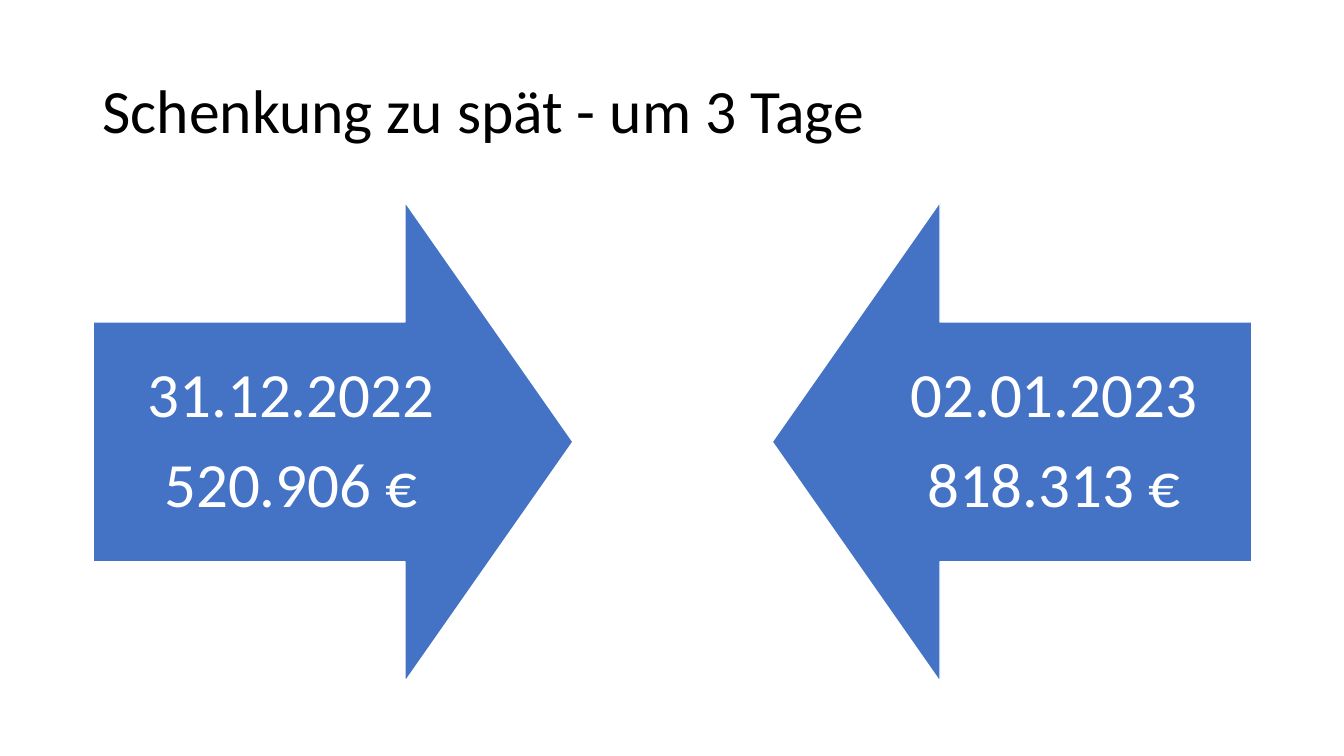
from pptx import Presentation
from pptx.dml.color import RGBColor
from pptx.enum.shapes import MSO_SHAPE
from pptx.enum.text import MSO_ANCHOR, PP_ALIGN
from pptx.util import Cm, Pt

COLORS = {"arrow": "4472C4", "light": "FFFFFF", "title": "000000"}
FONT = "Calibri"


def format_paragraph(paragraph, size, color, alignment):
    paragraph.alignment = alignment
    paragraph.line_spacing = 0.9
    for run in paragraph.runs:
        run.font.name = FONT
        run.font.size = Pt(size)
        run.font.color.rgb = RGBColor.from_string(COLORS[color])


presentation = Presentation()
presentation.slide_width = Cm(33.87)
presentation.slide_height = Cm(19.05)
slide = presentation.slides.add_slide(presentation.slide_layouts[5])

title = slide.shapes.title
title.left, title.top, title.width, title.height = Cm(2.33), Cm(1.01), Cm(29.21), Cm(3.68)
title.text_frame.text = "Schenkung zu spät - um 3 Tage"
title.text_frame.vertical_anchor = MSO_ANCHOR.MIDDLE
format_paragraph(title.text_frame.paragraphs[0], 44, "title", PP_ALIGN.LEFT)

ARROW_SIZE = Cm(12.09)
INSET = Cm(0.89)
arrows = [
    (MSO_SHAPE.RIGHT_ARROW, Cm(2.35), "31.12.2022", "520.906 €"),
    (MSO_SHAPE.LEFT_ARROW, Cm(19.46), "02.01.2023", "818.313 €"),
]
for arrow_type, left, date, amount in arrows:
    arrow = slide.shapes.add_shape(arrow_type, left, Cm(5.09), ARROW_SIZE, ARROW_SIZE)
    arrow.adjustments[0] = 0.5
    arrow.adjustments[1] = 0.35
    arrow.shadow.inherit = False
    arrow.fill.solid()
    arrow.fill.fore_color.rgb = RGBColor.from_string(COLORS["arrow"])
    arrow.line.color.rgb = RGBColor.from_string(COLORS["light"])
    arrow.line.width = Pt(1)

    text_frame = arrow.text_frame
    text_frame.word_wrap = True
    text_frame.vertical_anchor = MSO_ANCHOR.MIDDLE
    text_frame.margin_left = text_frame.margin_right = INSET
    text_frame.margin_top = text_frame.margin_bottom = INSET
    text_frame.text = f"{date}\n{amount}"
    for paragraph in text_frame.paragraphs:
        format_paragraph(paragraph, 45, "light", PP_ALIGN.CENTER)
    text_frame.paragraphs[0].space_after = Pt(15.75)

presentation.save("out.pptx")
